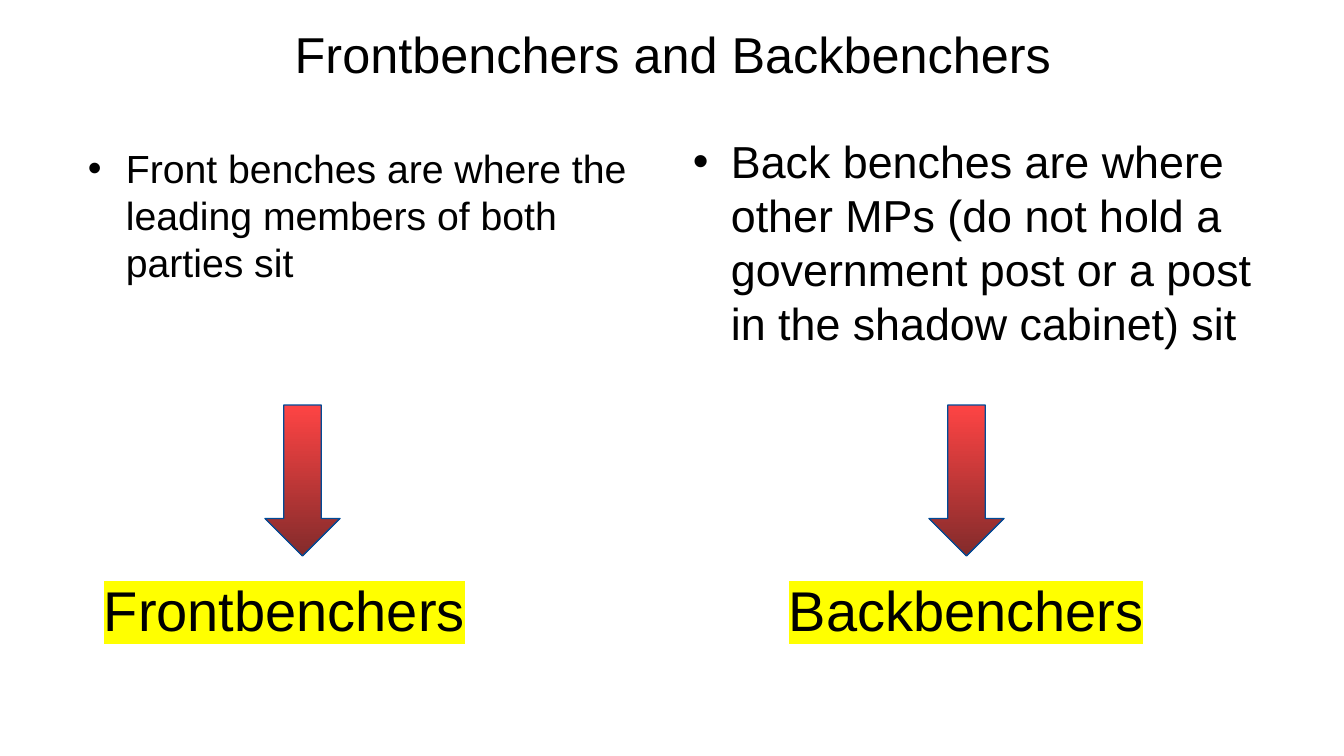
from lxml.etree import SubElement
from pptx import Presentation
from pptx.dml.color import RGBColor
from pptx.enum.shapes import MSO_SHAPE
from pptx.enum.text import MSO_ANCHOR, MSO_AUTO_SIZE, PP_ALIGN
from pptx.oxml.ns import qn
from pptx.util import Emu, Pt

SCALE = 914400 / 100.8
INK, MARK, EDGE = "000000", "FFFF00", "004B97"
FADE = ("FE4444", "832B2B")


def px(n):
    return Emu(round(n * SCALE))


def paint(color, tone):
    color.rgb = RGBColor.from_string(tone)


def apply(item, values):
    for key, value in values.items():
        setattr(item, key, value)


def place(box):
    return [px(n) for n in box]


def write(frame, text, size, **form):
    """Fill a frame with one paragraph and return the paragraph."""
    apply(frame, form)
    para = frame.paragraphs[0]
    run = para.add_run()
    run.text = text
    apply(run.font, {"name": "Arial", "size": Pt(size)})
    paint(run.font.color, INK)
    return para


def title(slide, box, text):
    head = slide.shapes.title
    apply(head, dict(zip(("left", "top", "width", "height"), place(box))))
    para = write(head.text_frame, text, 36, word_wrap=True,
                 auto_size=MSO_AUTO_SIZE.NONE,
                 vertical_anchor=MSO_ANCHOR.MIDDLE)
    para.alignment = PP_ALIGN.CENTER


def bullet(slide, box, text, size):
    frame = slide.shapes.add_textbox(*place(box)).text_frame
    para = write(frame, text, size, word_wrap=True)
    props = para._p.get_or_add_pPr()
    props.set("marL", str(px(38)))
    props.set("indent", str(-px(38)))
    SubElement(props, qn("a:buFont"), typeface="Arial")
    SubElement(props, qn("a:buChar"), char="•")


def arrow(slide, box):
    """Turn a right arrow so that it fills the upright box."""
    x, y, w, h = box
    flat = (x + (w - h) / 2, y + (h - w) / 2, h, w)
    shape = slide.shapes.add_shape(MSO_SHAPE.RIGHT_ARROW, *place(flat))
    shape.rotation = 90
    shape.shadow.inherit = False
    shape.fill.gradient()
    shape.fill.gradient_angle = 0
    for stop, tone in zip(shape.fill.gradient_stops, FADE):
        paint(stop.color, tone)
    paint(shape.line.color, EDGE)
    shape.line.width = Pt(1)


def label(slide, box, text):
    frame = slide.shapes.add_textbox(*place(box)).text_frame
    para = write(frame, text, 40, word_wrap=False,
                 auto_size=MSO_AUTO_SIZE.SHAPE_TO_FIT_TEXT)
    # The highlight follows the text fill
    fill = para.runs[0]._r.rPr.find(qn("a:solidFill"))
    glow = SubElement(fill.getparent(), qn("a:highlight"))
    SubElement(glow, qn("a:srgbClr"), val=MARK)
    fill.addnext(glow)


def column(slide, box, text, size, drop, shaft, name, inset, width):
    """Stack a bullet, an arrow and a label inside the box."""
    x, y, w, h = box
    bullet(slide, (x, y + drop, w, h - drop), text, size)
    arrow(slide, (x + shaft, y + 276, 75, 151))
    label(slide, (x + inset, y + 442, width, 78), name)


def main():
    deck = Presentation()
    deck.slide_width, deck.slide_height = px(1344), px(756)
    slide = deck.slides.add_slide(deck.slide_layouts[5])
    title(slide, (68, 21, 1210, 64), "Frontbenchers and Backbenchers")

    # Left column
    column(slide, (78, 129, 594, 509),
           "Front benches are where the leading members of both parties sit",
           28, 10, 187, "Frontbenchers", 16, 381)

    # Right column
    column(slide, (683, 129, 594, 546),
           "Back benches are where other MPs (do not hold a government post "
           "or a post in the shadow cabinet) sit",
           32, 0, 246, "Backbenchers", 96, 375)
    deck.save("out.pptx")


if __name__ == "__main__":
    main()
